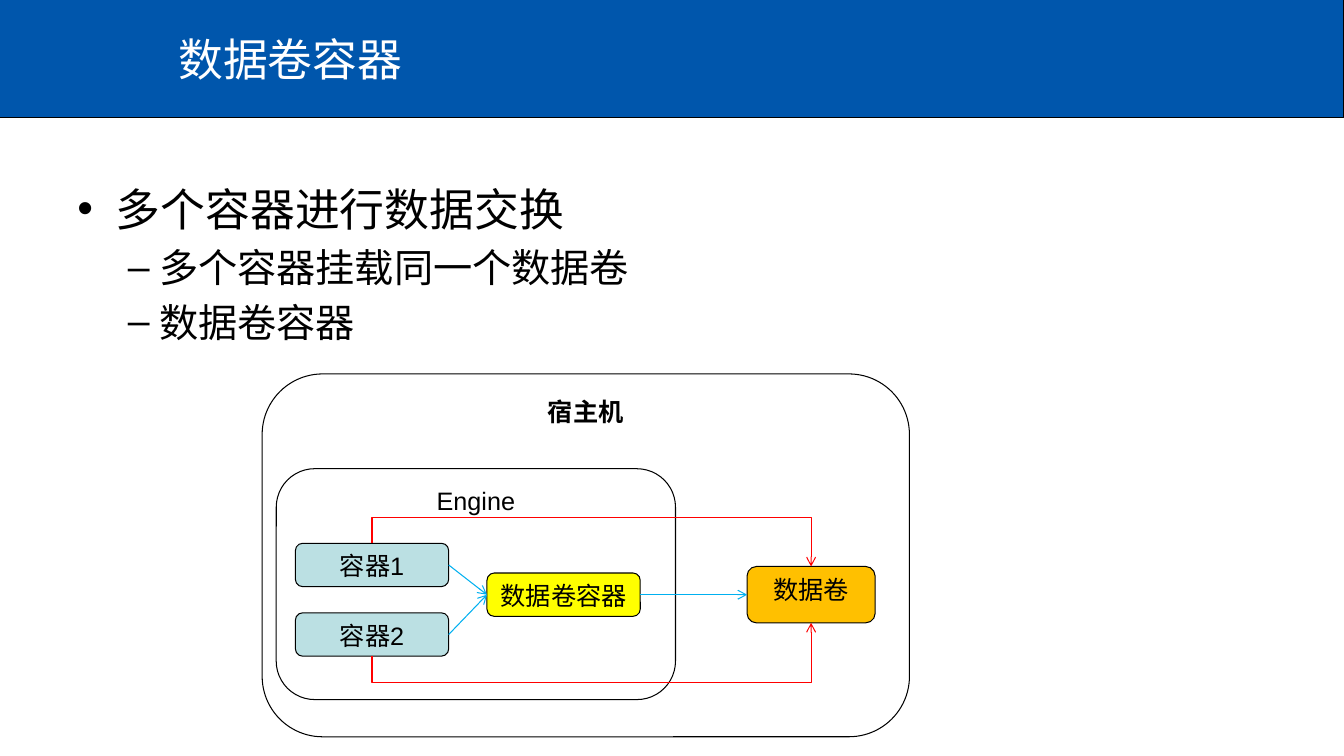
import dataclasses

import pptx
import pptx.dml.color
import pptx.enum.shapes
import pptx.enum.text
import pptx.oxml
import pptx.oxml.ns
import pptx.util
from pptx.util import Inches

SHAPE = pptx.enum.shapes.MSO_SHAPE
LINK = pptx.enum.shapes.MSO_CONNECTOR
ALIGN = pptx.enum.text.PP_ALIGN
ANCHOR = pptx.enum.text.MSO_ANCHOR


@dataclasses.dataclass(frozen=True)
class Theme:
    blue: str = "0056AC"
    white: str = "FFFFFF"
    black: str = "000000"
    teal: str = "BBE0E3"
    yellow: str = "FFFF00"
    orange: str = "FFC000"
    cyan: str = "00B0F0"
    red: str = "FF0000"
    latin: str = "Arial"
    han: str = "Noto Sans CJK SC"
    title: int = 32
    sub: int = 28
    label: int = 18
    line: float = 0.75


THEME = Theme()


def rgb(code):
    return pptx.dml.color.RGBColor.from_string(code)


def child(parent, tag, **attrs):
    node = pptx.oxml.parse_xml(f"<a:{tag} {pptx.oxml.ns.nsdecls('a')}/>")
    for key, value in attrs.items():
        node.set(key, value)
    parent.append(node)
    return node


def write(para, text, size, color=THEME.black, name=THEME.latin, bold=False):
    run = para.add_run()
    run.text = text
    look = {"size": pptx.util.Pt(size), "name": name, "bold": bold}
    for key, value in look.items():
        setattr(run.font, key, value)
    run.font.color.rgb = rgb(color)


def block(slide, kind, box, fill):
    shape = slide.shapes.add_shape(kind, *map(Inches, box))
    shape.shadow.inherit = False
    shape.fill.solid()
    shape.fill.fore_color.rgb = rgb(fill)
    shape.line.color.rgb = rgb(THEME.black)
    shape.line.width = pptx.util.Pt(THEME.line)
    return shape


def node(slide, box, text, fill=THEME.white, bold=False):
    shape = block(slide, SHAPE.ROUNDED_RECTANGLE, box, fill)
    shape.text_frame.vertical_anchor = ANCHOR.TOP
    para = shape.text_frame.paragraphs[0]
    para.alignment = ALIGN.CENTER
    write(para, text, THEME.label, bold=bold)


def wire(slide, kind, start, end, color):
    link = slide.shapes.add_connector(kind, *map(Inches, start + end))
    link.line.color.rgb = rgb(color)
    link.line.width = pptx.util.Pt(THEME.line)
    props = link.element.spPr
    child(props.find(pptx.oxml.ns.qn("a:ln")), "tailEnd", type="arrow")
    child(props, "effectLst")
    return link


def elbow(slide, start, end, rail, color):
    """Run from start up or down to the level rail, across, and back to end."""
    dx, dy = end[0] - start[0], end[1] - start[1]
    sign = 1 if dy > 0 else -1
    midx, midy = start[0] + dx / 2, start[1] + dy / 2
    wide, tall = abs(dy) / 2, sign * dx / 2
    link = wire(slide, LINK.ELBOW, (midx + wide, midy - tall),
                (midx - wide, midy + tall), color)
    props = link.element.spPr
    turn = 270 if dy > 0 else 90
    props.find(pptx.oxml.ns.qn("a:xfrm")).set("rot", str(turn * 60000))
    geom = props.find(pptx.oxml.ns.qn("a:prstGeom"))
    for old in list(geom):
        geom.remove(old)
    bend = round((rail - start[1]) / dy * 100000)
    child(child(geom, "avLst"), "gd", name="adj1", fmla=f"val {bend}")


def header(slide, box, text):
    left, top, width, height = box
    block(slide, SHAPE.RECTANGLE, box, THEME.blue)
    area = (left + 1.67, top + 0.08, width - 1.67, 1)
    frame = slide.shapes.add_textbox(*map(Inches, area)).text_frame
    frame.word_wrap = True
    frame.vertical_anchor = ANCHOR.MIDDLE
    write(frame.paragraphs[0], text, THEME.title, THEME.white)


def points(slide, box, items):
    frame = slide.shapes.add_textbox(*map(Inches, box)).text_frame
    frame.word_wrap = True
    levels = [(0.38, 0.38, "•", THEME.title), (0.81, 0.31, "–", THEME.sub)]
    for pos, (level, text) in enumerate(items):
        margin, hang, mark, size = levels[level]
        para = frame.add_paragraph() if pos else frame.paragraphs[0]
        para.level = level
        props = para._p.get_or_add_pPr()
        props.set("marL", str(Inches(margin)))
        props.set("indent", str(-Inches(hang)))
        child(props, "buFont", typeface=THEME.latin)
        child(props, "buChar", char=mark)
        if pos:
            para.space_before = pptx.util.Pt(size * 0.2)
        write(para, text, size, name=THEME.han)


def diagram(slide, box):
    left, top, width, height = box
    node(slide, box, "宿主机", bold=True)
    node(slide, (left + 0.14, top + 0.94, 3.96, 2.29), "Engine")

    wide, tall = 1.52, 0.43
    inner, first, gap = left + 0.33, top + 1.68, 0.69
    axis = top + 2.19
    for row in range(2):
        spot = (inner, first + row * gap, wide, tall)
        node(slide, spot, f"容器{row + 1}", THEME.teal)

    hub = left + 2.23
    node(slide, (hub, axis - tall / 2, wide, tall), "数据卷容器", THEME.yellow)
    store, span, deep = left + 4.81, 1.27, 0.56
    node(slide, (store, axis - deep / 2, span, deep), "数据卷", THEME.orange)

    for row in range(2):
        start = (inner + wide, first + row * gap + tall / 2)
        wire(slide, LINK.STRAIGHT, start, (hub, axis), THEME.cyan)
    wire(slide, LINK.STRAIGHT, (hub + wide, axis), (store, axis), THEME.cyan)

    for side, edge in ((-1, first), (1, first + gap + tall)):
        start = (inner + wide / 2, edge)
        end = (store + span / 2, axis + side * deep / 2)
        elbow(slide, start, end, edge + side * 0.26, THEME.red)


def main():
    deck = pptx.Presentation()
    deck.slide_width, deck.slide_height = Inches(13.33), Inches(7.5)
    slide = deck.slides.add_slide(deck.slide_layouts[6])
    header(slide, (0, 0, 13.33, 1.17), "数据卷容器")
    points(slide, (0.67, 1.75, 12, 4.95), [
        (0, "多个容器进行数据交换"),
        (1, "多个容器挂载同一个数据卷"),
        (1, "数据卷容器"),
    ])
    diagram(slide, (2.6, 3.71, 6.42, 3.6))
    deck.save("out.pptx")


if __name__ == "__main__":
    main()
